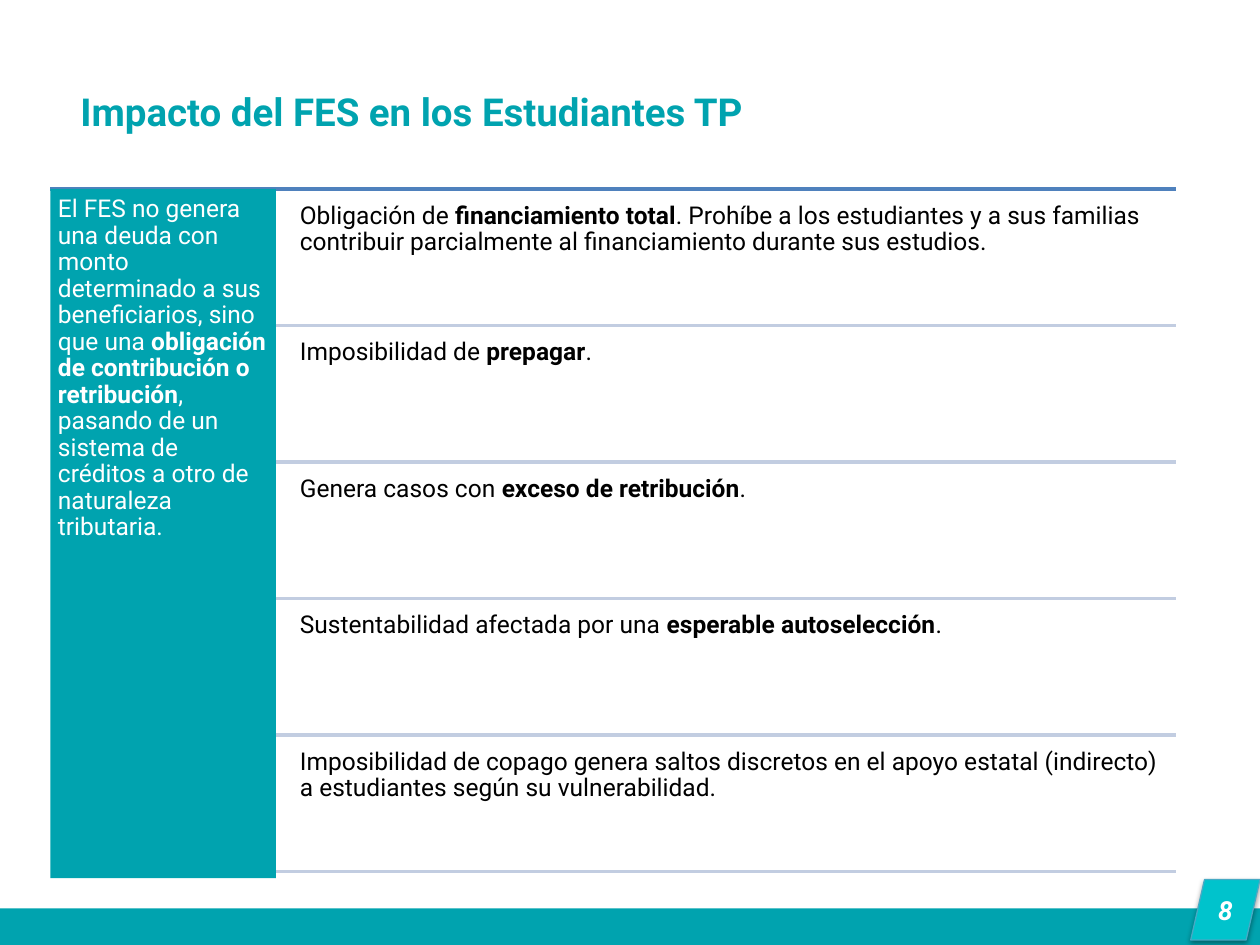
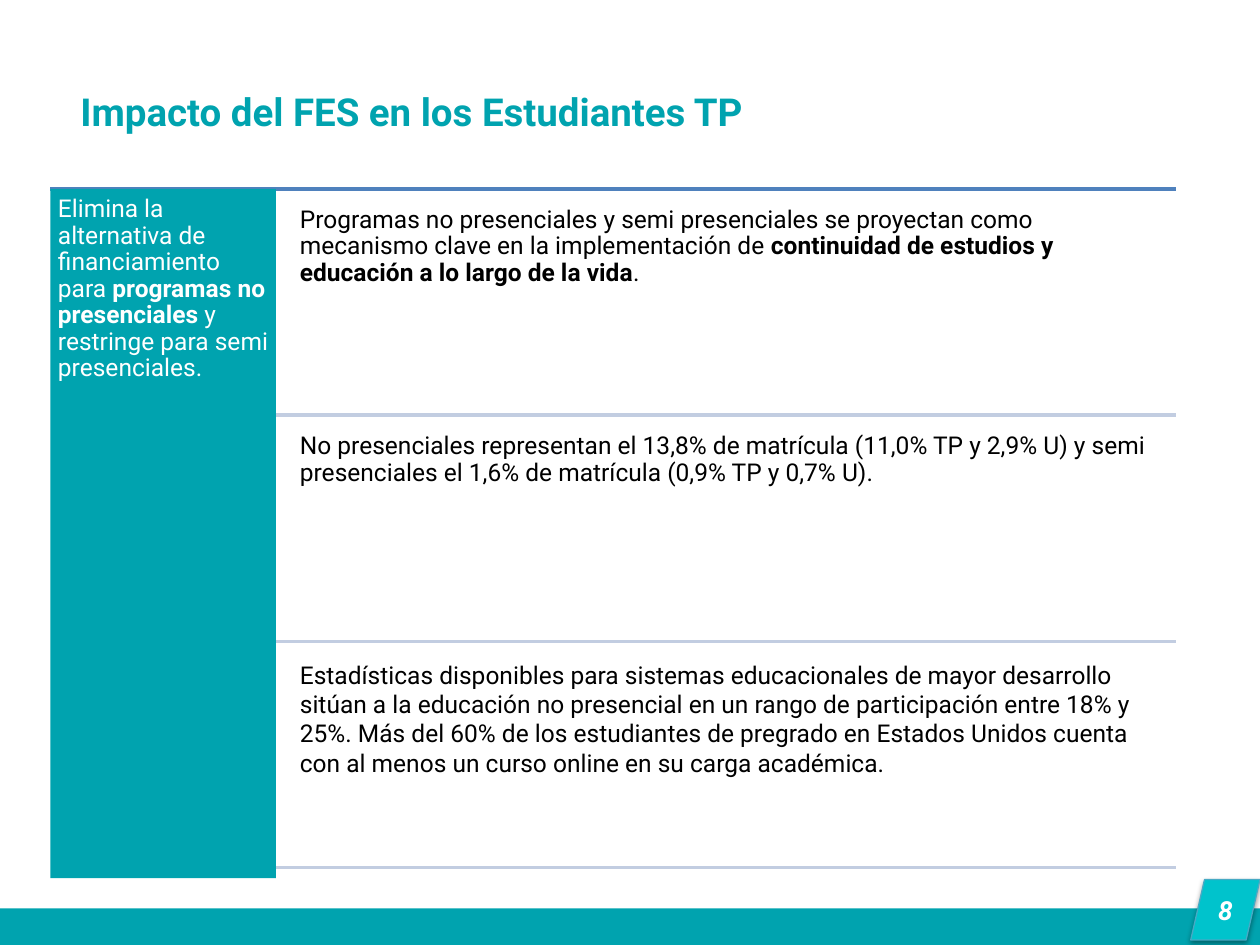
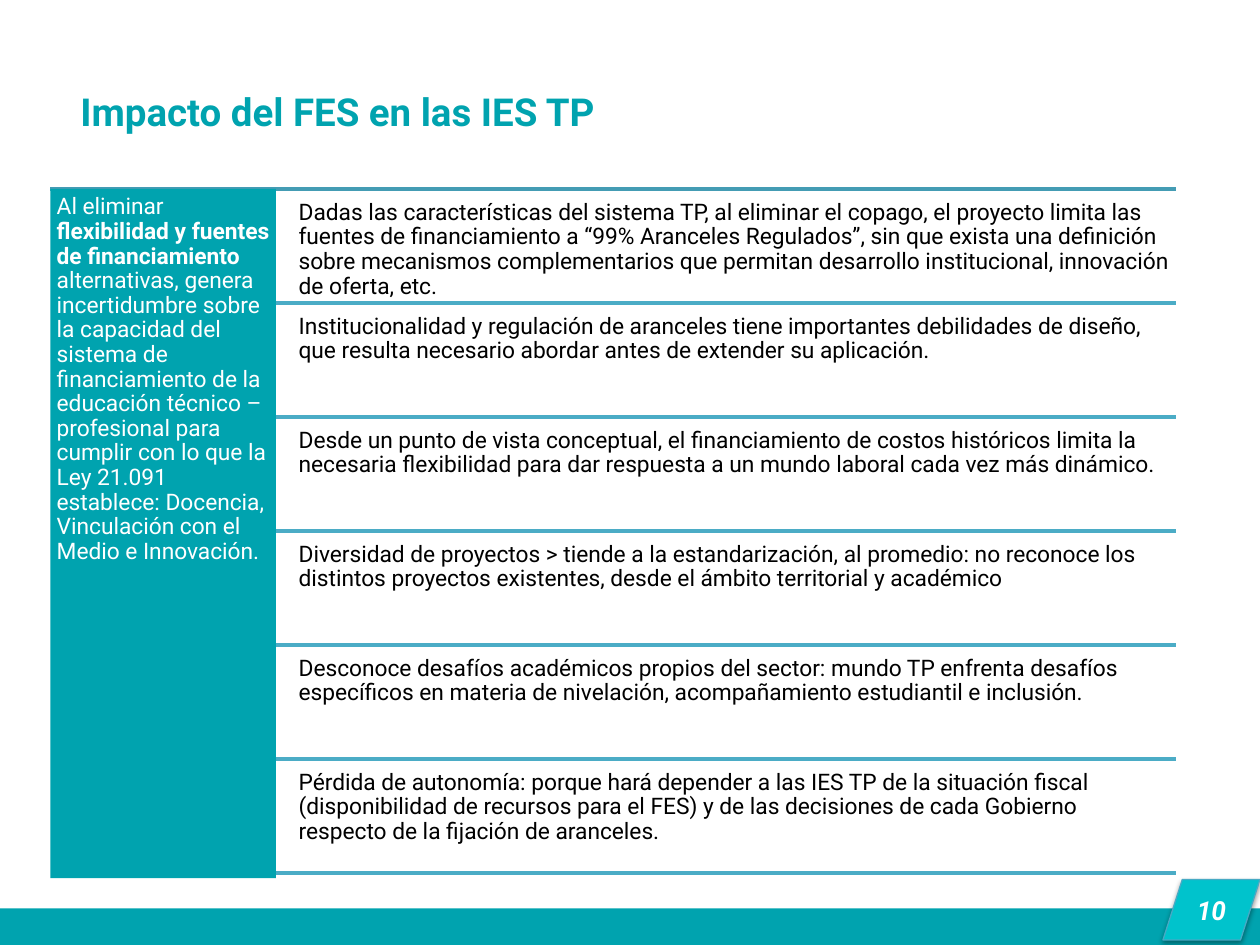
from lxml import etree
from pptx import Presentation
from pptx.dml.color import RGBColor
from pptx.enum import shapes, text
from pptx.oxml import ns
from pptx.util import Inches, Pt

TEAL = RGBColor(0x00, 0xA3, 0xAF)
BRIGHT_TEAL = RGBColor(0x00, 0xC3, 0xCC)
TAB_EDGE = RGBColor(0x46, 0xAA, 0xC5)
BLUE = RGBColor(0x4F, 0x81, 0xBD)
PALE_BLUE = RGBColor(0xC2, 0xCD, 0xE1)
DEEP_AQUA = RGBColor(0x44, 0x9C, 0xB4)
AQUA = RGBColor(0x4B, 0xAC, 0xC6)
WHITE = RGBColor(0xFF, 0xFF, 0xFF)
BLACK = RGBColor(0x00, 0x00, 0x00)

FONT = "Roboto"
SLIDE_WIDTH, SLIDE_HEIGHT = 10, 7.5
PANEL_LEFT, PANEL_TOP, PANEL_WIDTH, PANEL_HEIGHT = 0.4, 1.5, 1.79, 5.47
ROW_TEXT_LEFT, ROWS_RIGHT = 2.32, 9.33
GAP_SHARE = 0.05  # gap around the rows, as a share of a row's height
TIGHT = 0.9


class Deck:
    def __init__(self):
        self.presentation = Presentation()
        self.presentation.slide_width = Inches(SLIDE_WIDTH)
        self.presentation.slide_height = Inches(SLIDE_HEIGHT)
        self.slide = None

    def add_slide(self, title, number):
        """Start a slide with its title, bottom band and number tab."""
        self.slide = self.presentation.slides.add_slide(self.presentation.slide_layouts[6])
        self.add_text((0.54, 0.69, 6.42, 0.58), f"**{title}**", 22, TEAL, (0.1, 0.05))
        self.add_block(shapes.MSO_SHAPE.RECTANGLE, (0, 7.21, SLIDE_WIDTH, 0.29), TEAL)
        self.add_number_tab(number)

    def add_block(self, kind, box, color):
        shape = self.slide.shapes.add_shape(kind, *map(Inches, box))
        shape.shadow.inherit = False
        shape.fill.solid()
        shape.fill.fore_color.rgb = color
        shape.line.fill.background()
        return shape

    def add_number_tab(self, number):
        width = 0.33 + 0.22 * len(number)
        tab = self.add_block(shapes.MSO_SHAPE.FLOWCHART_DATA,
                             (SLIDE_WIDTH - width, 6.98, width, 0.48), BRIGHT_TEAL)
        tab.line.color.rgb = TAB_EDGE
        tab.line.width = Pt(0.75)
        effects = tab._element.spPr.find(ns.qn("a:effectLst"))
        shadow = etree.SubElement(effects, ns.qn("a:outerShdw"), blurRad=str(Pt(3.1)),
                                  dist=str(Pt(1.6)), dir="5400000", rotWithShape="0")
        color = etree.SubElement(shadow, ns.qn("a:srgbClr"), val=str(BLACK))
        etree.SubElement(color, ns.qn("a:alpha"), val="38000")
        self.fill_text(tab, f"**{number}**", 15, WHITE, (0, 0), 1)
        tab.text_frame.vertical_anchor = text.MSO_ANCHOR.MIDDLE
        paragraph = tab.text_frame.paragraphs[0]
        paragraph.alignment = text.PP_ALIGN.CENTER
        for run in paragraph.runs:
            run.font.italic = True

    def add_text(self, box, words, size, color, insets, spacing=TIGHT):
        shape = self.slide.shapes.add_textbox(*map(Inches, box))
        self.fill_text(shape, words, size, color, insets, spacing)

    def fill_text(self, shape, words, size, color, insets, spacing=TIGHT):
        """Fill a shape with words; parts between ** marks are bold."""
        frame = shape.text_frame
        frame.word_wrap = True
        frame.vertical_anchor = text.MSO_ANCHOR.TOP
        frame.margin_left = frame.margin_right = Inches(insets[0])
        frame.margin_top = frame.margin_bottom = Inches(insets[1])
        paragraph = frame.paragraphs[0]
        paragraph.alignment = text.PP_ALIGN.LEFT
        paragraph.line_spacing = spacing
        for index, part in enumerate(words.split("**")):
            if part:
                run = paragraph.add_run()
                run.text = part
                run.font.name = FONT
                run.font.size = Pt(size)
                run.font.bold = index % 2 == 1
                run.font.color.rgb = color

    def add_rule(self, left, y, color):
        rule = self.slide.shapes.add_connector(
            shapes.MSO_CONNECTOR.STRAIGHT, *map(Inches, (left, y, ROWS_RIGHT, y)))
        rule.line.color.rgb = color
        rule.line.width = Pt(2)
        etree.SubElement(rule._element.spPr, ns.qn("a:effectLst"))

    def add_outline(self, heading, rows, size, inset, top_color, rule_color, loose_rows=()):
        """Add the heading panel and equal ruled rows; loose rows keep single spacing."""
        insets = (inset, inset)
        self.add_rule(PANEL_LEFT, PANEL_TOP, top_color)
        panel = self.add_block(shapes.MSO_SHAPE.RECTANGLE,
                               (PANEL_LEFT, PANEL_TOP, PANEL_WIDTH, PANEL_HEIGHT), TEAL)
        self.fill_text(panel, heading, size, WHITE, insets)
        count = len(rows)
        row_height = PANEL_HEIGHT / (count + (count + 1) * GAP_SHARE)
        gap = row_height * GAP_SHARE
        for index, words in enumerate(rows):
            top = PANEL_TOP + gap + index * (row_height + gap)
            self.add_text((ROW_TEXT_LEFT, top, ROWS_RIGHT - ROW_TEXT_LEFT, row_height),
                          words, size, BLACK, insets, 1 if index in loose_rows else TIGHT)
            self.add_rule(PANEL_LEFT + PANEL_WIDTH, top + row_height, rule_color)


def main():
    deck = Deck()

    deck.add_slide("Impacto del FES en los Estudiantes TP", "8")
    deck.add_outline(
        "El FES no genera una deuda con monto determinado a sus beneficiarios, sino que una "
        "**obligación de contribución o retribución**, pasando de un sistema de créditos a "
        "otro de naturaleza tributaria.",
        ["Obligación de **financiamiento total**. Prohíbe a los estudiantes y a sus familias "
         "contribuir parcialmente al financiamiento durante sus estudios.",
         "Imposibilidad de **prepagar**.",
         "Genera casos con **exceso de retribución**.",
         "Sustentabilidad afectada por una **esperable autoselección**.",
         "Imposibilidad de copago genera saltos discretos en el apoyo estatal (indirecto) a "
         "estudiantes según su vulnerabilidad."],
        14, 0.06, BLUE, PALE_BLUE)

    deck.add_slide("Impacto del FES en los Estudiantes TP", "8")
    deck.add_outline(
        "Elimina la alternativa de financiamiento para **programas no presenciales** y "
        "restringe para semi presenciales.",
        ["Programas no presenciales y semi presenciales se proyectan como mecanismo clave en "
         "la implementación de **continuidad de estudios y educación a lo largo de la vida**.",
         "No presenciales representan el 13,8% de matrícula (11,0% TP y 2,9% U) y semi "
         "presenciales el 1,6% de matrícula (0,9% TP y 0,7% U).",
         "Estadísticas disponibles para sistemas educacionales de mayor desarrollo sitúan a "
         "la educación no presencial en un rango de participación entre 18% y 25%. Más del "
         "60% de los estudiantes de pregrado en Estados Unidos cuenta con al menos un curso "
         "online en su carga académica."],
        14, 0.06, BLUE, PALE_BLUE, loose_rows=(2,))

    deck.add_slide("Impacto del FES en las IES TP", "10")
    deck.add_outline(
        "Al eliminar **flexibilidad y fuentes de financiamiento** alternativas, genera "
        "incertidumbre sobre la capacidad del sistema de financiamiento de la educación "
        "técnico – profesional para cumplir con lo que la Ley 21.091 establece: Docencia, "
        "Vinculación con el Medio e Innovación.",
        ["Dadas las características del sistema TP, al eliminar el copago, el proyecto limita "
         "las fuentes de financiamiento a “99% Aranceles Regulados”, sin que exista una "
         "definición sobre mecanismos complementarios que permitan desarrollo institucional, "
         "innovación de oferta, etc.",
         "Institucionalidad y regulación de aranceles tiene importantes debilidades de "
         "diseño, que resulta necesario abordar antes de extender su aplicación.",
         "Desde un punto de vista conceptual, el financiamiento de costos históricos limita "
         "la necesaria flexibilidad para dar respuesta a un mundo laboral cada vez más "
         "dinámico.",
         "Diversidad de proyectos > tiende a la estandarización, al promedio: no reconoce los "
         "distintos proyectos existentes, desde el ámbito territorial y académico",
         "Desconoce desafíos académicos propios del sector: mundo TP enfrenta desafíos "
         "específicos en materia de nivelación, acompañamiento estudiantil e inclusión.",
         "Pérdida de autonomía: porque hará depender a las IES TP de la situación fiscal "
         "(disponibilidad de recursos para el FES) y de las decisiones de cada Gobierno "
         "respecto de la fijación de aranceles."],
        13, 0.05, DEEP_AQUA, AQUA)

    deck.presentation.save("out.pptx")


if __name__ == "__main__":
    main()
